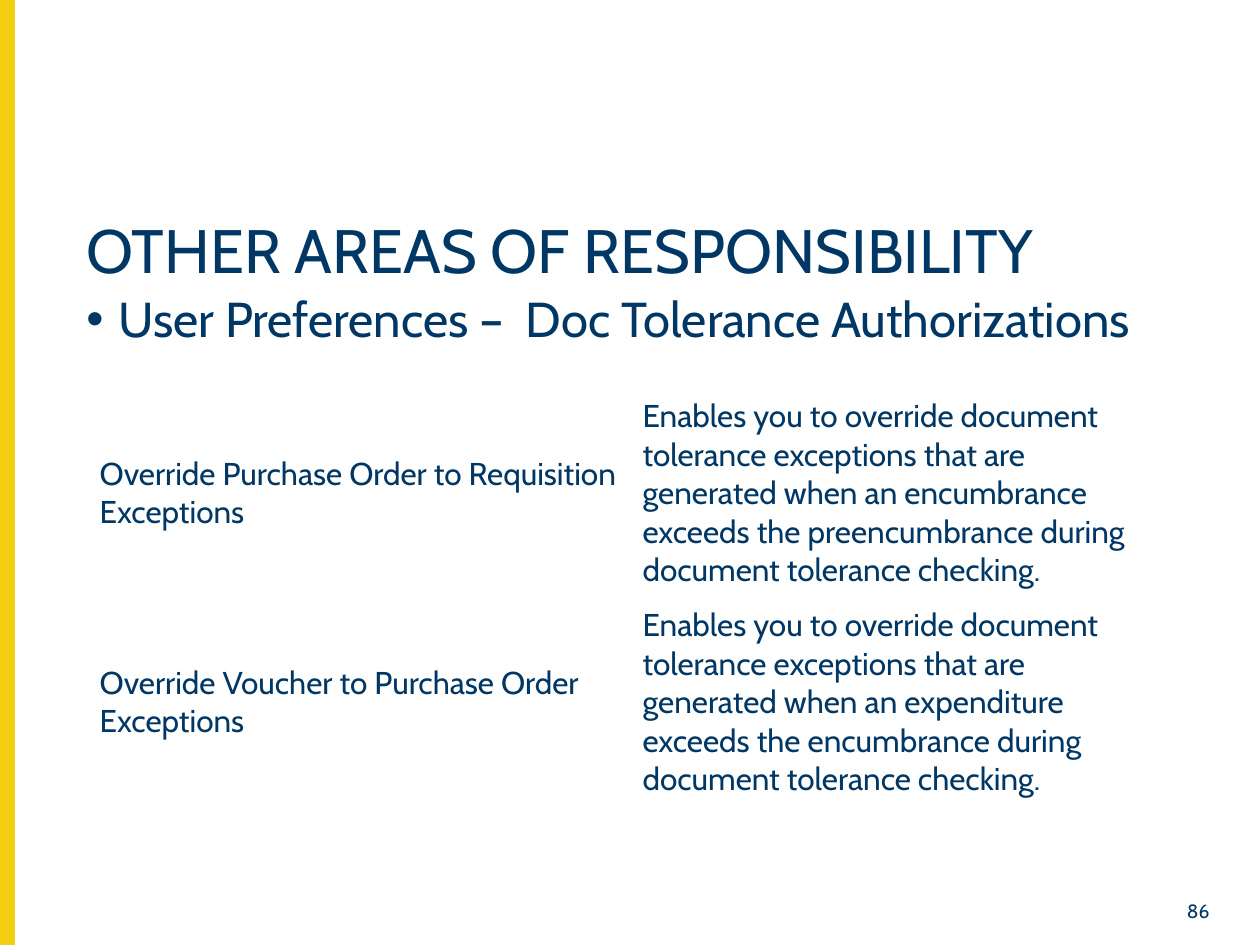
from dataclasses import dataclass

from lxml import etree
from pptx import Presentation
from pptx.dml.color import RGBColor
from pptx.enum.shapes import MSO_SHAPE
from pptx.enum.text import MSO_ANCHOR, PP_ALIGN
from pptx.oxml.ns import qn
from pptx.util import Pt

RECT = MSO_SHAPE.RECTANGLE
MIDDLE = MSO_ANCHOR.MIDDLE
RIGHT = PP_ALIGN.RIGHT


@dataclass(frozen=True)
class Theme:
    font: str = "Cabin"
    ink: RGBColor = RGBColor(0x00, 0x37, 0x64)
    gold: RGBColor = RGBColor(0xF4, 0xCE, 0x12)
    title: int = 35
    body: int = 28
    cell: int = 18
    page: int = 11


THEME = Theme()
TITLE = "OTHER AREAS OF RESPONSIBILITY"
TOPIC = "User Preferences –  Doc Tolerance Authorizations"
PAGE = "86"
ROWS = [
    ("Override Purchase Order to Requisition Exceptions",
     "Enables you to override document tolerance exceptions that are generated "
     "when an encumbrance exceeds the preencumbrance during document tolerance checking."),
    ("Override Voucher to Purchase Order Exceptions",
     "Enables you to override document tolerance exceptions that are generated "
     "when an expenditure exceeds the encumbrance during document tolerance checking."),
]

EMU = 914400 // 126
WIDE, HIGH = 1260, 945
BAR = 14
LEFT, SPAN = 74, 1149
TABLE = (87, 389, 1086, 418)
INDENT = 32


def px(*nums):
    return [n * EMU for n in nums]


def style(para, size):
    para.font.name = THEME.font
    para.font.size = Pt(size)
    para.font.color.rgb = THEME.ink


def add_text(slide, box, text, size):
    frame = slide.shapes.add_textbox(*px(*box)).text_frame
    frame.word_wrap = True
    frame.text = text
    para = frame.paragraphs[0]
    style(para, size)
    return para


def add_bullet(para):
    props = para._p.get_or_add_pPr()
    props.set("marL", str(INDENT * EMU))
    props.set("indent", str(-INDENT * EMU))
    font = etree.Element(qn("a:buFont"), typeface="Arial")
    mark = etree.Element(qn("a:buChar"), char="•")
    # Bullet elements belong before the default run properties.
    spot = props.find(qn("a:defRPr"))
    for item in (font, mark):
        spot.addprevious(item)


def add_grid(slide):
    frame = slide.shapes.add_table(len(ROWS), len(ROWS[0]), *px(*TABLE))
    table = frame.table
    table.first_row = table.horz_banding = False
    for r, row in enumerate(ROWS):
        for c, text in enumerate(row):
            cell = table.cell(r, c)
            cell.fill.background()
            cell.vertical_anchor = MIDDLE
            cell.text = text
            style(cell.text_frame.paragraphs[0], THEME.cell)
            edges = cell._tc.get_or_add_tcPr()
            for i, side in enumerate(("lnL", "lnR", "lnT", "lnB")):
                line = etree.Element(qn("a:" + side), w="0")
                etree.SubElement(line, qn("a:noFill"))
                edges.insert(i, line)


def main():
    deck = Presentation()
    deck.slide_width, deck.slide_height = px(WIDE, HIGH)
    slide = deck.slides.add_slide(deck.slide_layouts[6])

    bar = slide.shapes.add_shape(RECT, *px(0, 0, BAR, HIGH))
    bar.shadow.inherit = False
    bar.fill.solid()
    bar.fill.fore_color.rgb = bar.line.color.rgb = THEME.gold
    bar.line.width = Pt(1)

    title = add_text(slide, (LEFT, 214, SPAN, 110), TITLE, THEME.title)
    topic = add_text(slide, (LEFT, 289, SPAN, 638), TOPIC, THEME.body)
    title.line_spacing = topic.line_spacing = 0.9
    add_bullet(topic)

    page = add_text(slide, (1158, 893, 64, 33), PAGE, THEME.page)
    page.alignment = RIGHT
    add_grid(slide)
    deck.save("out.pptx")


if __name__ == "__main__":
    main()
